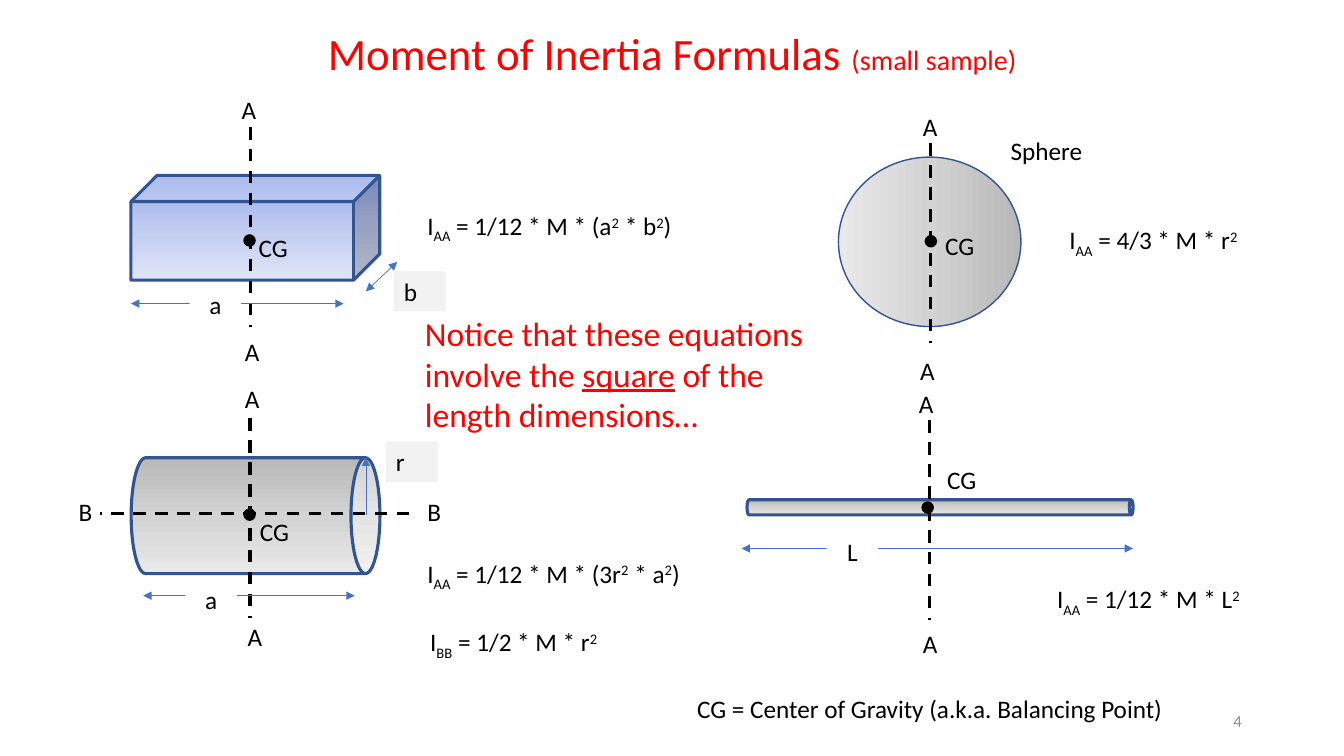
from lxml import etree
from pptx import Presentation
from pptx import util as u
from pptx.dml.color import RGBColor
from pptx.enum import dml, shapes, text
from pptx.oxml import ns

BLACK, RED, OUTLINE, ACCENT = "000000", "FF0000", "325491", "4472C4"
PALE_TAG, WHITE = "F2F2F2", "FFFFFF"
GREYS = ("B8B8B8", "D3D3D3", "E9E9E9")
BLUES = ("96ABEA", "C0CBF0", "E0E5F7")
LINE_HEIGHT = 1.02
AXIS_LENGTH = 5.03
DOT = 0.28
LEFT, CENTER, RIGHT = text.PP_ALIGN.LEFT, text.PP_ALIGN.CENTER, text.PP_ALIGN.RIGHT
TOP, MIDDLE = text.MSO_ANCHOR.TOP, text.MSO_ANCHOR.MIDDLE


def rgb(value):
    return RGBColor.from_string(value)


def cm(*lengths):
    return [u.Cm(length) for length in lengths]


def put_text(shape, content, size=18, color=BLACK, align=LEFT, anchor=TOP,
             spacing=None, grow=True):
    """Fill a shape with a string or a list of (string, run format) pairs."""
    frame = shape.text_frame
    frame.word_wrap = True
    frame.vertical_anchor = anchor
    fit = text.MSO_AUTO_SIZE
    frame.auto_size = fit.SHAPE_TO_FIT_TEXT if grow else fit.NONE
    paragraph = frame.paragraphs[0]
    paragraph.alignment = align
    if spacing:
        paragraph.line_spacing = spacing
    runs = [(content, {})] if isinstance(content, str) else content
    for words, look in runs:
        run = paragraph.add_run()
        run.text = words
        run.font.name = "Calibri"
        run.font.size = u.Pt(look.get("size", size))
        run.font.color.rgb = rgb(color)
        if look.get("underline"):
            run.font.underline = True
        if "baseline" in look:
            run.font._element.set("baseline", str(look["baseline"] * 1000))


def add_label(parent, content, x, y, width, height=LINE_HEIGHT, **look):
    put_text(parent.add_textbox(*cm(x, y, width, height)), content, **look)


def add_formula(parent, axis, expression, x, y, width):
    """Write I with the axis as subscript; the character after ^ is raised."""
    first, *powers = expression.split("^")
    runs = [("I", {}), (axis, {"baseline": -25}), (" = " + first, {})]
    for power in powers:
        runs.append((power[0], {"baseline": 30}))
        if power[1:]:
            runs.append((power[1:], {}))
    add_label(parent, runs, x, y, width)


def add_line(parent, start, end, color=ACCENT, weight=0.5, dashed=False, arrows=()):
    """Draw a straight line; arrows lists the ends, headEnd before tailEnd."""
    line = parent.add_connector(shapes.MSO_CONNECTOR.STRAIGHT, *cm(*start, *end))
    line.line.color.rgb = rgb(color)
    line.line.width = u.Pt(weight)
    if dashed:
        line.line.dash_style = dml.MSO_LINE.DASH
    outline = line.line._get_or_add_ln()
    for end_tag in arrows:
        etree.SubElement(outline, ns.qn("a:" + end_tag), type="triangle")
    etree.SubElement(line._element.spPr, ns.qn("a:effectLst"))


def add_dimension(parent, start, end):
    add_line(parent, start, end, arrows=("headEnd", "tailEnd"))


def add_dashed(parent, start, end):
    add_line(parent, start, end, BLACK, 2.25, dashed=True)


def add_plain(parent, kind, x, y, width, height, fill, line=None, weight=1):
    shape = parent.add_shape(kind, *cm(x, y, width, height))
    shape.shadow.inherit = False
    shape.fill.solid()
    shape.fill.fore_color.rgb = rgb(fill)
    if line:
        shape.line.color.rgb = rgb(line)
        shape.line.width = u.Pt(weight)
    else:
        shape.line.fill.background()
    return shape


def add_solid(parent, kind, box, colors, angle, weight=2.25, rotation=0):
    """Draw a body with a three-stop gradient; angle runs anticlockwise."""
    body = add_plain(parent, kind, *box, colors[0], OUTLINE, weight)
    body.rotation = rotation
    body.fill.gradient()
    body.fill.gradient_angle = angle
    stops = body._element.spPr.find(ns.qn("a:gradFill")).find(ns.qn("a:gsLst"))
    for stop in list(stops):
        stops.remove(stop)
    for position, color in zip((0, 50000, 100000), colors):
        stop = etree.SubElement(stops, ns.qn("a:gs"), pos=str(position))
        etree.SubElement(stop, ns.qn("a:srgbClr"), val=color)


def add_axis(parent, x, y, top_label, bottom_label):
    axis = parent.add_group_shape().shapes
    add_dashed(axis, (x, y), (x, y + AXIS_LENGTH))
    for corner in (top_label, bottom_label):
        add_label(axis, "A", *corner, 0.99)


def add_tag(parent, letter, x, y, fill=WHITE, align=CENTER):
    tag = add_plain(parent, shapes.MSO_SHAPE.RECTANGLE, x, y, 1.3, LINE_HEIGHT, fill)
    put_text(tag, letter, align=align)


def add_bodies(page):
    kinds = shapes.MSO_SHAPE
    add_solid(page, kinds.CUBE, (3.3, 4.42, 6.27, 2.64), BLUES, 270)
    add_solid(page, kinds.CAN, (4.98, 9.86, 2.92, 6.27), GREYS, 0, rotation=90)
    add_solid(page, kinds.CAN, (23.5, 7.92, 0.38, 9.73), GREYS, 0, rotation=90)
    add_solid(page, kinds.OVAL, (21.13, 3.96, 4.6, 4.27), GREYS, 180, weight=1)


def add_axes(page):
    add_axis(page, 6.32, 3.2, (5.84, 2.26), (5.92, 8.36))
    add_axis(page, 6.3, 10.54, (5.92, 9.53), (5.99, 15.54))
    add_axis(page, 23.42, 10.59, (22.91, 9.65), (23.01, 15.7))
    add_axis(page, 23.44, 3.61, (23.01, 2.67), (22.94, 8.84))
    add_dashed(page, (10.31, 12.93), (2.51, 12.93))
    for x in (10.52, 1.73):
        add_label(page, "B", x, 12.37, 0.99)


def add_centers(page):
    for dot, label in (((6.15, 5.92), (6.27, 5.72)),
                       ((6.15, 12.83), (6.3, 12.88)),
                       ((23.32, 5.94), (23.57, 5.69)),
                       ((23.24, 12.65), (23.62, 11.58))):
        add_label(page, "CG", *label, 1.63)
        add_plain(page, shapes.MSO_SHAPE.OVAL, *dot, DOT, DOT, BLACK, BLACK)


def add_dimensions(page):
    add_dimension(page, (3.3, 7.65), (8.66, 7.65))
    add_dimension(page, (9.22, 7.34), (10.01, 6.6))
    add_dimension(page, (3.61, 15.01), (8.94, 15.01))
    add_dimension(page, (18.69, 13.82), (28.55, 13.82))
    add_line(page, (9.22, 12.98), (9.22, 11.53), arrows=("tailEnd",))
    add_tag(page, "a", 4.78, 7.16)
    add_tag(page, "a", 4.67, 14.61)
    add_tag(page, "L", 20.83, 13.39)
    add_tag(page, "b", 9.93, 6.83, PALE_TAG, LEFT)
    add_tag(page, "r", 9.73, 11.13, PALE_TAG, LEFT)


def add_formulas(page):
    add_formula(page, "AA", "1/12 * M * (a^2 * b^2)", 10.52, 5.18, 7.77)
    add_formula(page, "AA", "1/12 * M * (3r^2 * a^2)", 10.52, 13.94, 7.77)
    add_formula(page, "BB", "1/2 * M * r^2", 10.59, 15.67, 7.77)
    add_formula(page, "AA", "4/3 * M * r^2", 26.7, 5.54, 5.38)
    add_formula(page, "AA", "1/12 * M * L^2", 26.39, 14.58, 5.99)


def main():
    deck = Presentation()
    deck.slide_width, deck.slide_height = cm(33.87, 19.05)
    page = deck.slides.add_slide(deck.slide_layouts[6]).shapes
    add_label(page, [("Moment of Inertia Formulas ", {}), ("(small sample)", {"size": 20})],
              5.51, 0.38, 22.86, 2.06, size=32, color=RED, align=CENTER,
              anchor=MIDDLE, spacing=0.9, grow=False)
    add_bodies(page)
    add_axes(page)
    add_centers(page)
    add_dimensions(page)
    add_formulas(page)
    add_label(page, "Sphere", 25.22, 3.28, 3.35)
    add_label(page, [("Notice that these equations involve the ", {}),
                     ("square", {"underline": True}),
                     (" of the length dimensions…", {})],
              10.46, 7.77, 10.41, 3.33, size=24, color=RED)
    add_label(page, "CG = Center of Gravity (a.k.a. Balancing Point)", 17.32, 17.35, 12.7)
    add_label(page, "4", 23.93, 17.65, 7.62, size=12, color="8C8C8C", align=RIGHT,
              anchor=MIDDLE, grow=False)
    deck.save("out.pptx")


if __name__ == "__main__":
    main()
